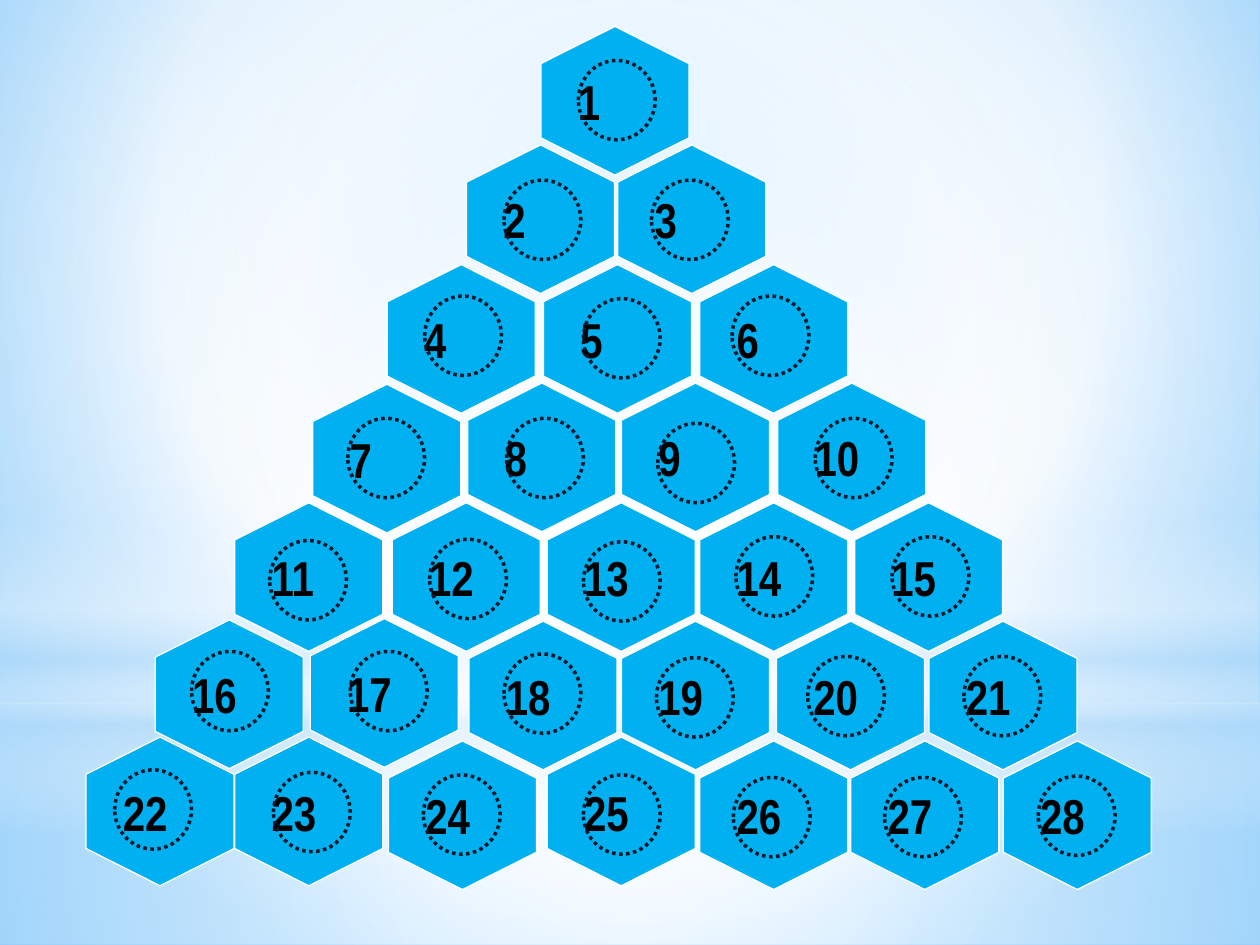
from lxml import etree
from pptx import Presentation
from pptx.dml.color import RGBColor
from pptx.enum.dml import MSO_LINE
from pptx.enum.shapes import MSO_SHAPE
from pptx.enum.text import MSO_ANCHOR, PP_ALIGN
from pptx.oxml.ns import qn
from pptx.util import Inches, Pt

HEXAGON = MSO_SHAPE.HEXAGON
OVAL = MSO_SHAPE.OVAL
RECTANGLE = MSO_SHAPE.RECTANGLE
DOTTED = MSO_LINE.ROUND_DOT
MIDDLE = MSO_ANCHOR.MIDDLE
CENTER = PP_ALIGN.CENTER

HEXAGON_SIZE = 1.18
RING_SIZE = (0.61, 0.63)
NUMBER_FORMAT = {"name": "Arial Narrow", "size": Pt(28), "bold": True}

BACKGROUND_STOPS = [(0, "9ED5FF", 100), (60, "FFFFFF", 100), (100, "5BB9FF", 100)]
BACKGROUND_FOCUS = (20, 10, 20, 60)
CENTER_FOCUS = (50, 50, 50, 50)
GLOW_LAYERS = [
    (RECTANGLE, (0, 5.58, 10, 1.92), CENTER_FOCUS,
     [(0, "FFFFFF", 91), (37, "FFFFFF", 76), (100, "B4DCFA", 79)]),
    (RECTANGLE, (0, 0, 10, 5.58), CENTER_FOCUS,
     [(0, "FFFFFF", 89), (48, "FFFFFF", 62), (100, "B4DCFA", 79)]),
    (RECTANGLE, (0, 4.12, 10, 2.5), None,
     [(0, "FFFFFF", 0), (29, "FFFFFF", 30), (45, "B4DCFA", 40),
      (55, "FFFFFF", 26), (65, "B4DCFA", 60), (100, "FFFFFF", 0)]),
    (OVAL, (0, 1.75, 10, 5.58), CENTER_FOCUS,
     [(0, "FFFFFF", 100), (56, "FFFFFF", 0)]),
]

HEXAGON_ROWS = [
    [(4.29, 0.21)],
    [(3.7, 1.15), (4.9, 1.15)],
    [(3.07, 2.1), (4.31, 2.1), (5.55, 2.1)],
    [(2.48, 3.05), (3.71, 3.04), (4.93, 3.04), (6.17, 3.04)],
    [(1.86, 3.99), (3.11, 3.99), (4.34, 3.99), (5.55, 3.99), (6.78, 3.99)],
    [(1.23, 4.92), (2.46, 4.91), (3.72, 4.93), (4.93, 4.93), (6.16, 4.93),
     (7.37, 4.93)],
    [(0.68, 5.85), (1.86, 5.85), (3.08, 5.88), (4.34, 5.85), (5.55, 5.88),
     (6.75, 5.88), (7.96, 5.88)],
]
RING_ROWS = [
    [(4.59, 0.48)],
    [(4, 1.43), (5.17, 1.43)],
    [(3.37, 2.35), (4.63, 2.37), (5.81, 2.35)],
    [(2.76, 3.32), (4.02, 3.32), (5.22, 3.36), (6.47, 3.32)],
    [(2.14, 4.29), (3.41, 4.28), (4.63, 4.3), (5.84, 4.26), (7.08, 4.26)],
    [(1.52, 5.17), (2.78, 5.17), (4, 5.19), (5.21, 5.22), (6.41, 5.21),
     (7.65, 5.21)],
    [(0.91, 6.11), (2.17, 6.13), (3.36, 6.15), (4.63, 6.15), (5.82, 6.17),
     (7.02, 6.17), (8.24, 6.16)],
]


def color(value):
    return RGBColor.from_string(value)


def add_child(parent, tag, **attributes):
    values = {name: str(value) for name, value in attributes.items()}
    return etree.SubElement(parent, qn(tag), values)


def set_gradient(fill, element, stops, focus):
    fill.gradient()
    gradient = next(element.iter(qn("a:gradFill")))
    gradient.clear()
    gradient.set("rotWithShape", "1")
    stop_list = add_child(gradient, "a:gsLst")
    for position, value, opacity in stops:
        stop = add_child(stop_list, "a:gs", pos=position * 1000)
        stop_color = add_child(stop, "a:srgbClr", val=value)
        if opacity < 100:
            add_child(stop_color, "a:alpha", val=opacity * 1000)
    if focus:
        shade = add_child(gradient, "a:path", path="circle")
        edges = {side: edge * 1000 for side, edge in zip("ltrb", focus)}
        add_child(shade, "a:fillToRect", **edges)
    else:
        add_child(gradient, "a:lin", ang=90 * 60000, scaled=0)


def add_plain_shape(slide, kind, box):
    shape = slide.shapes.add_shape(kind, *(Inches(length) for length in box))
    shape.shadow.inherit = False
    return shape


def add_backdrop(slide):
    set_gradient(slide.background.fill, slide.element, BACKGROUND_STOPS,
                 BACKGROUND_FOCUS)
    for kind, box, focus, stops in GLOW_LAYERS:
        layer = add_plain_shape(slide, kind, box)
        layer.line.fill.background()
        set_gradient(layer.fill, layer.element, stops, focus)


def add_numbered_hexagon(slide, box, number):
    hexagon = add_plain_shape(slide, HEXAGON, box)
    hexagon.rotation = 90
    hexagon.adjustments[0] = 0.25
    hexagon.adjustments[1] = 1.15
    hexagon.fill.solid()
    hexagon.fill.fore_color.rgb = color("00B0F0")
    hexagon.line.color.rgb = color("FFFFFF")
    hexagon.line.width = Pt(0.75)

    frame = hexagon.text_frame
    frame.word_wrap = False
    frame.vertical_anchor = MIDDLE
    body = next(hexagon.element.iter(qn("a:bodyPr")))
    body.set("rot", str(180 * 60000))
    body.set("vert", "eaVert")
    paragraph = frame.paragraphs[0]
    paragraph.alignment = CENTER
    run = paragraph.add_run()
    run.text = str(number)
    for name, value in NUMBER_FORMAT.items():
        setattr(run.font, name, value)
    run.font.color.rgb = color("000000")


def add_ring(slide, box):
    ring = add_plain_shape(slide, OVAL, box)
    ring.fill.background()
    ring.line.color.rgb = color("031828")
    ring.line.width = Pt(2)
    ring.line.dash_style = DOTTED


def add_pyramid(slide, left, top):
    hexagons = [place for row in HEXAGON_ROWS for place in row]
    for number, (x, y) in enumerate(hexagons, start=1):
        box = (left + x, top + y, HEXAGON_SIZE, HEXAGON_SIZE)
        add_numbered_hexagon(slide, box, number)
    for row in RING_ROWS:
        for x, y in row:
            add_ring(slide, (left + x, top + y, *RING_SIZE))


def main():
    presentation = Presentation()
    presentation.slide_width = Inches(10)
    presentation.slide_height = Inches(7.5)
    slide = presentation.slides.add_slide(presentation.slide_layouts[6])
    add_backdrop(slide)
    add_pyramid(slide, 0, 0)
    presentation.save("out.pptx")


if __name__ == "__main__":
    main()
